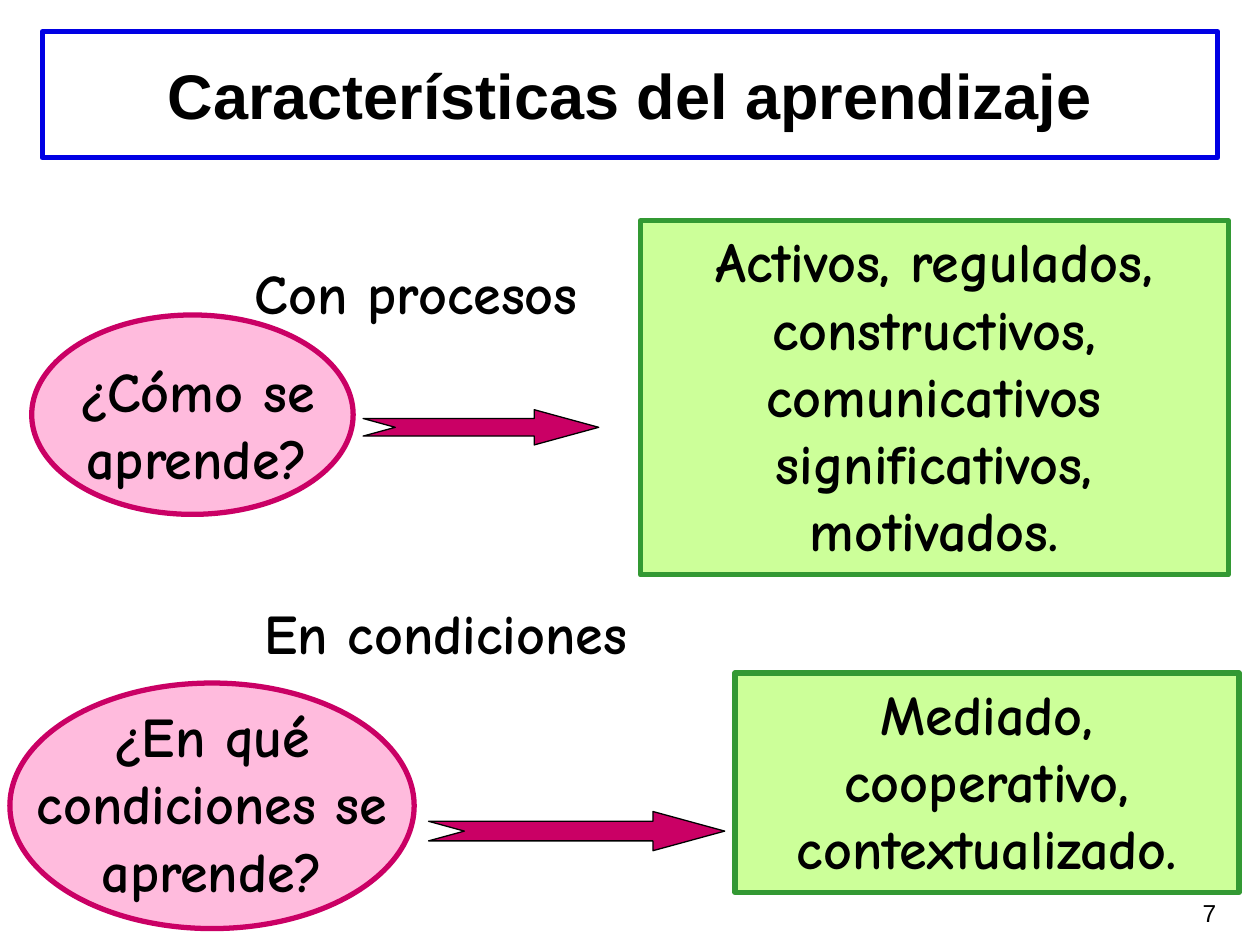
from pptx import Presentation
from pptx.dml.color import RGBColor
from pptx.enum.shapes import MSO_SHAPE
from pptx.enum.text import MSO_ANCHOR, PP_ALIGN
from pptx.util import Cm, Pt


def color(hex_str):
    return RGBColor.from_string(hex_str)


def style(sp, fill=None, line=None, width=3, text="", size=32, font="Comic Neue",
          bold=True, align=PP_ALIGN.CENTER, anchor=MSO_ANCHOR.TOP):
    """Set fill and outline, then write the text as one run."""
    if fill:
        sp.shadow.inherit = False
        sp.fill.solid()
        sp.fill.fore_color.rgb = color(fill)
        sp.line.color.rgb = color(line)
        sp.line.width = Pt(width)
    if text:
        tf = sp.text_frame
        tf.word_wrap = True
        tf.vertical_anchor = anchor
        p = tf.paragraphs[0]
        p.alignment = align
        r = p.add_run()
        r.text = text
        r.font.size = Pt(size)
        r.font.name = font
        r.font.bold = bold
        r.font.color.rgb = color("000000")


prs = Presentation()
prs.slide_width, prs.slide_height = Cm(25.4), Cm(19.05)
s = prs.slides.add_slide(prs.slide_layouts[5])

# Title
title = s.shapes.title
title.left, title.top, title.width, title.height = Cm(0.85), Cm(0.64), Cm(23.7), Cm(2.54)
style(title, "FFFFFF", "0000E4", text="Características del aprendizaje", size=36,
      font="Arial", anchor=MSO_ANCHOR.MIDDLE)

# Green answer boxes
answers = [
    ("Mediado, cooperativo, contextualizado.", (14.82, 13.57, 10.16, 4.42)),
    ("Activos, regulados, constructivos, comunicativos significativos, motivados.",
     (12.91, 4.45, 11.85, 7.14)),
]
for text, box in answers:
    sp = s.shapes.add_shape(MSO_SHAPE.RECTANGLE, *map(Cm, box))
    style(sp, "CCFF99", "339933", text=text)

# Questions: ellipse, text and arrow in one group
questions = [
    ("¿En qué condiciones se aprende?", (0.2, 13.77, 8.15, 4.95),
     (0.48, 14.02, 7.6, 4.32), (8.64, 16.36, 5.97, 0.79)),
    ("¿Cómo se aprende?", (0.64, 6.35, 6.48, 4.02),
     (0.85, 7.06, 6.25, 2.97), (7.32, 8.26, 4.75, 0.71)),
]
for text, ellipse_box, text_box, arrow_box in questions:
    group = s.shapes.add_group_shape()
    ellipse = group.shapes.add_shape(MSO_SHAPE.OVAL, *map(Cm, ellipse_box))
    style(ellipse, "FFBBDD", "CA0065")
    style(group.shapes.add_textbox(*map(Cm, text_box)), text=text)
    arrow = group.shapes.add_shape(MSO_SHAPE.NOTCHED_RIGHT_ARROW, *map(Cm, arrow_box))
    arrow.adjustments[0], arrow.adjustments[1] = 0.5, 1.83
    style(arrow, "CA0065", "000000", 0.75)

# Labels above the arrows
labels = [
    ("Con procesos", (4.88, 5.08, 7.62, 1.6)),
    ("En condiciones", (5.08, 11.94, 10.36, 1.6)),
]
for text, box in labels:
    style(s.shapes.add_textbox(*map(Cm, box)), text=text, align=PP_ALIGN.LEFT)

# Slide number
number = s.shapes.add_textbox(Cm(23.7), Cm(17.98), Cm(1.07), Cm(1.07))
style(number, text="7", size=14, font="Arial", bold=False, align=PP_ALIGN.RIGHT)

prs.save("out.pptx")
